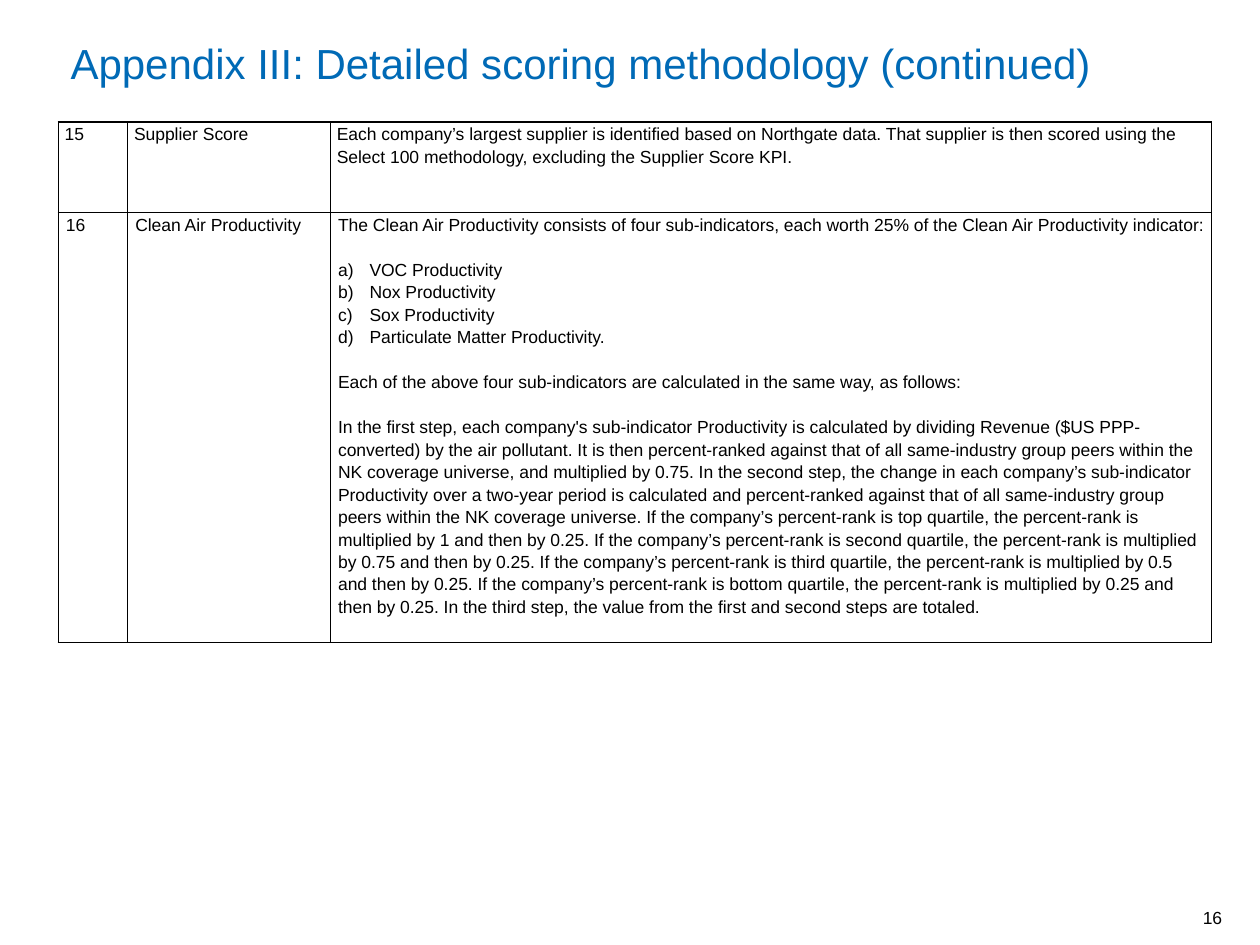
from lxml import etree
from pptx import Presentation
from pptx import util as u
from pptx.dml import color
from pptx.enum import text
from pptx.oxml import ns

FONT = "Arial"
BLACK = "000000"
BLUE = "006AB6"
LINE_GAP = 12.9
COLUMN_WIDTHS = [39.6, 115.9, 503.3]
ROW_HEIGHTS = [51.6, 244]
SIDE_MARGINS = [3.6, 4.32]

SUPPLIER_TEXT = (
    "Each company’s largest supplier is identified based on Northgate data. "
    "That supplier is then scored using the Select 100 methodology, "
    "excluding the Supplier Score KPI."
)
PEERS = "against that of all same‐industry group peers within the NK coverage universe"
QUARTILE_FACTORS = {"top": "1", "second": "0.75", "third": "0.5", "bottom": "0.25"}
STEP_SENTENCES = [
    "In the first step, each company's sub-indicator Productivity is calculated by "
    "dividing Revenue ($US PPP-converted) by the air pollutant.",
    f"It is then percent‐ranked {PEERS}, and multiplied by 0.75.",
    "In the second step, the change in each company’s sub-indicator Productivity over "
    f"a two-year period is calculated and percent‐ranked {PEERS}.",
    *[
        f"If the company’s percent‐rank is {quartile} quartile, the percent‐rank is "
        f"multiplied by {factor} and then by 0.25."
        for quartile, factor in QUARTILE_FACTORS.items()
    ],
    "In the third step, the value from the first and second steps are totaled.",
]
SUB_INDICATORS = [
    "VOC Productivity",
    "Nox Productivity",
    "Sox Productivity",
    "Particulate Matter Productivity.",
]
CLEAN_AIR_PARAGRAPHS = [
    "The Clean Air Productivity consists of four sub-indicators, each worth 25% "
    "of the Clean Air Productivity indicator:",
    *SUB_INDICATORS,
    "Each of the above four sub-indicators are calculated in the same way, as follows:",
    " ".join(STEP_SENTENCES),
]
ROWS = [
    [["15"], ["Supplier Score"], [SUPPLIER_TEXT]],
    [["16"], ["Clean Air Productivity"], CLEAN_AIR_PARAGRAPHS],
]


def set_font(paragraph, size, hex_color):
    for run in paragraph.runs:
        run.font.name = FONT
        run.font.size = u.Pt(size)
        run.font.color.rgb = color.RGBColor.from_string(hex_color)


def set_margins(frame, side, vertical):
    frame.margin_left = frame.margin_right = u.Pt(side)
    frame.margin_top = frame.margin_bottom = u.Pt(vertical)


def add_title(slide, title):
    shape = slide.shapes.title
    shape.left, shape.top = u.Pt(33.1), u.Pt(18)
    shape.width, shape.height = u.Pt(619.2), u.Pt(58.3)
    frame = shape.text_frame
    frame.text = title
    frame.word_wrap = True
    frame.auto_size = text.MSO_AUTO_SIZE.NONE
    frame.vertical_anchor = text.MSO_ANCHOR.TOP
    set_margins(frame, 7.2, 3.6)
    frame.paragraphs[0].alignment = text.PP_ALIGN.LEFT
    set_font(frame.paragraphs[0], 24, BLUE)


def add_page_number(slide, number):
    shape = slide.shapes.add_textbox(u.Pt(643), u.Pt(516.2), u.Pt(55.4), u.Pt(14.4))
    frame = shape.text_frame
    frame.text = number
    frame.word_wrap = True
    frame.vertical_anchor = text.MSO_ANCHOR.BOTTOM
    set_margins(frame, 0, 0)
    frame.paragraphs[0].alignment = text.PP_ALIGN.RIGHT
    set_font(frame.paragraphs[0], 10, BLACK)


def add_letter_bullet(paragraph):
    properties = paragraph._p.get_or_add_pPr()
    properties.set("marL", str(u.Pt(18)))
    properties.set("indent", str(-u.Pt(18)))
    etree.SubElement(properties, ns.qn("a:buAutoNum"), type="alphaLcParenR")


def add_borders(cell, width, hex_color):
    properties = cell._tc.get_or_add_tcPr()
    for side in ("lnL", "lnR", "lnT", "lnB"):
        line = etree.SubElement(properties, ns.qn("a:" + side), w=str(u.Pt(width)))
        fill = etree.SubElement(line, ns.qn("a:solidFill"))
        etree.SubElement(fill, ns.qn("a:srgbClr"), val=hex_color)


def fill_cell(cell, paragraphs, margin):
    set_margins(cell, margin, 0)
    cell.vertical_anchor = text.MSO_ANCHOR.TOP
    add_borders(cell, 1, BLACK)
    cell.fill.background()
    frame = cell.text_frame
    frame.text = "\n".join(paragraphs)
    for index, paragraph in enumerate(frame.paragraphs):
        if paragraph.text in SUB_INDICATORS:
            add_letter_bullet(paragraph)
        paragraph.line_spacing = 1.15
        if index and paragraph.text not in SUB_INDICATORS[1:]:
            paragraph.space_before = u.Pt(LINE_GAP)
        set_font(paragraph, 10, BLACK)


def add_scoring_table(slide):
    shape = slide.shapes.add_table(
        len(ROWS), len(COLUMN_WIDTHS), u.Pt(33.4), u.Pt(69.8),
        u.Pt(sum(COLUMN_WIDTHS)), u.Pt(sum(ROW_HEIGHTS)),
    )
    table = shape.table
    table.first_row = table.horz_banding = False
    for column, width in zip(table.columns, COLUMN_WIDTHS):
        column.width = u.Pt(width)
    for row, height, contents, margin in zip(table.rows, ROW_HEIGHTS, ROWS, SIDE_MARGINS):
        row.height = u.Pt(height)
        for cell, paragraphs in zip(row.cells, contents):
            fill_cell(cell, paragraphs, margin)


def main():
    presentation = Presentation()
    presentation.slide_width, presentation.slide_height = u.Pt(720), u.Pt(540)
    slide = presentation.slides.add_slide(presentation.slide_layouts[5])
    add_page_number(slide, "16")
    add_scoring_table(slide)
    add_title(slide, "Appendix III: Detailed scoring methodology (continued)")
    presentation.save("out.pptx")


if __name__ == "__main__":
    main()
